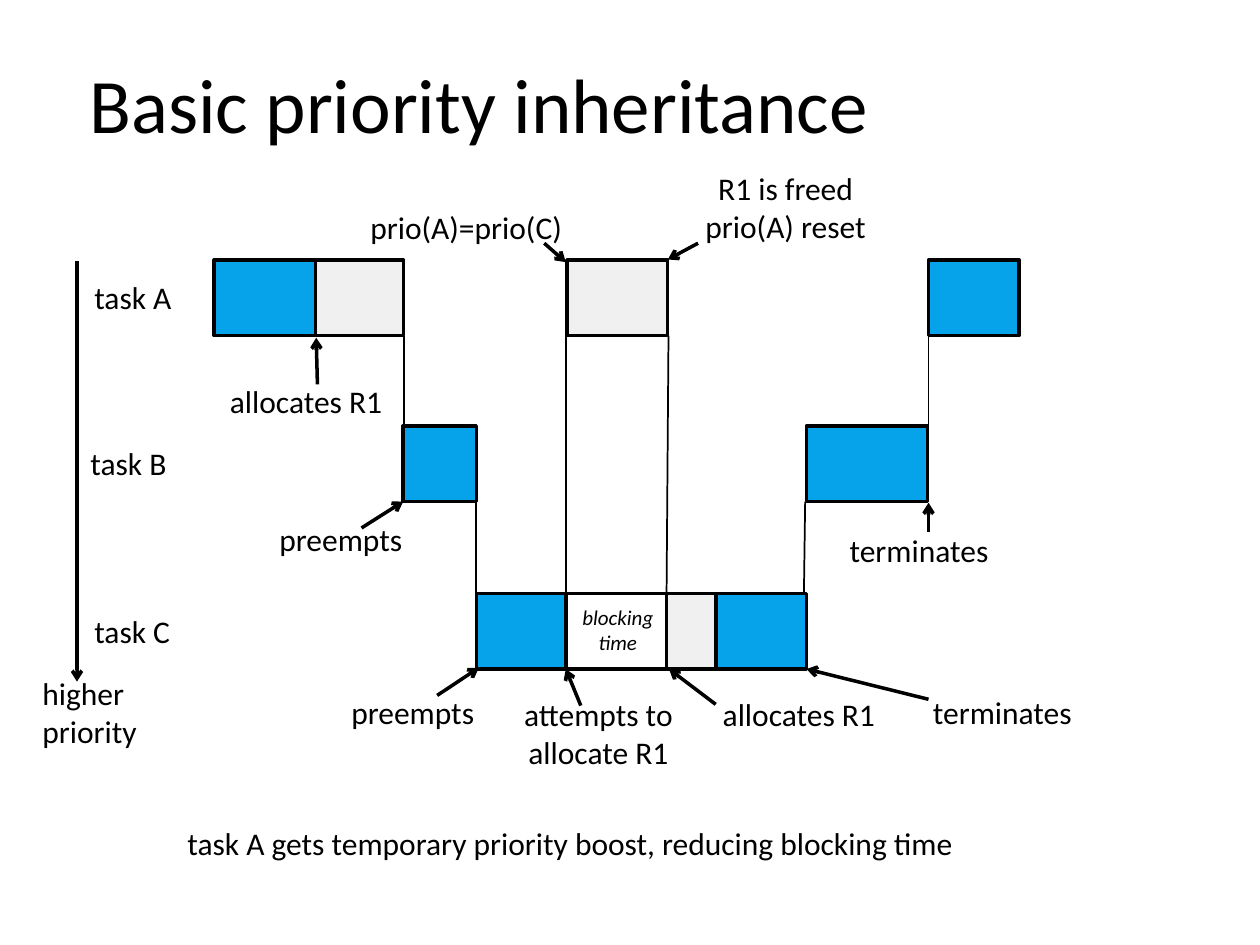
from lxml import etree
from pptx import Presentation
from pptx import util as u
from pptx.dml import color
from pptx.enum import shapes, text
from pptx.oxml import ns

HUES = {"ink": "000000", "run": "06A3EA", "lock": "D9D9D9"}
TALL = 43.2
ROWS = {"A": 148.6, "B": 243.4, "C": 339.1}


def rgb(name):
    return color.RGBColor.from_string(HUES[name])


class Chart:
    font = "Calibri"
    size = 18
    bold = 2
    thin = 1

    def __init__(self, slide):
        self.slide = slide

    def box(self, row, left, right, hue=None):
        item = self.slide.shapes.add_shape(
            shapes.MSO_SHAPE.RECTANGLE, u.Pt(left), u.Pt(ROWS[row]),
            u.Pt(right - left), u.Pt(TALL))
        item.shadow.inherit = False
        item.line.color.rgb = rgb("ink")
        item.line.width = u.Pt(self.bold)
        if hue is None:
            item.fill.background()
            return
        item.fill.solid()
        item.fill.fore_color.rgb = rgb(hue)
        if hue == "lock":
            tint = item.fill._xPr.find(ns.qn("a:solidFill"))[0]
            etree.SubElement(tint, ns.qn("a:alpha")).set("val", "39000")

    def label(self, words, left, top, width, mid=True, size=size, slant=False):
        count = words.count("\n") + 1
        item = self.slide.shapes.add_textbox(
            u.Pt(left), u.Pt(top), u.Pt(width), u.Pt(count * size * 1.2 + 7.2))
        frame = item.text_frame
        frame.word_wrap = False
        frame.auto_size = text.MSO_AUTO_SIZE.SHAPE_TO_FIT_TEXT
        frame.text = words
        for para in frame.paragraphs:
            para.alignment = text.PP_ALIGN.CENTER if mid else text.PP_ALIGN.LEFT
            for run in para.runs:
                run.font.name = self.font
                run.font.size = u.Pt(size)
                run.font.italic = slant
                run.font.color.rgb = rgb("ink")

    def line(self, start, end, width=thin):
        item = self.slide.shapes.add_connector(
            shapes.MSO_CONNECTOR.STRAIGHT, *map(u.Pt, start + end))
        item.line.color.rgb = rgb("ink")
        item.line.width = u.Pt(width)
        etree.SubElement(item._element.spPr, ns.qn("a:effectLst"))
        return item

    def arrow(self, start, end):
        item = self.line(start, end, self.bold)
        tip = etree.SubElement(item.line._get_or_add_ln(), ns.qn("a:tailEnd"))
        tip.set("type", "arrow")


def main():
    deck = Presentation()
    deck.slide_width, deck.slide_height = u.Pt(720), u.Pt(540)
    chart = Chart(deck.slides.add_slide(deck.slide_layouts[6]))

    chart.label("Basic priority inheritance", 44, 28.8, 464.5, False, 44)
    chart.label("task A gets temporary priority boost, reducing blocking time",
                100, 467.3, 457.2, False)
    chart.label("higher\npriority", 17.2, 381.6, 69, False)
    for row, left in (("A", 46.8), ("B", 44.6), ("C", 46.8)):
        chart.label(f"task {row}", left, ROWS[row] + 6.9, 59, False)

    for row, left, right, hue in (
        ("A", 324, 381.4, "lock"),
        ("A", 180.2, 230.6, "lock"),
        ("A", 122.4, 180.2, "run"),
        ("B", 230.2, 272.2, "run"),
        ("C", 272.2, 323.6, "run"),
        ("C", 323.6, 380.9, None),
        ("B", 460.8, 530.2, "run"),
        ("C", 380.9, 409.2, "lock"),
        ("C", 409.2, 460.8, "run"),
        ("A", 530.6, 582.4, "run"),
    ):
        chart.box(row, left, right, hue)
    chart.label("blocking\ntime", 325.4, 342, 55.4, size=12, slant=True)

    for low, high, foot, head in (
        (231, 231, "B", "A"),
        (272.2, 272.2, "C", "B"),
        (323.4, 323.4, "C", "A"),
        (380.9, 382, "C", "A"),
        (459.4, 460.1, "C", "B"),
        (530.6, 530.6, "B", "A"),
    ):
        chart.line((low, ROWS[foot]), (high, ROWS[head] + TALL))

    for words, left, top, width in (
        ("allocates R1", 123.8, 214.6, 102.2),
        ("preempts", 151.9, 293.8, 85.7),
        ("attempts to\nallocate R1", 291.6, 393.8, 100.8),
        ("R1 is freed\nprio(A) reset", 395.3, 92.9, 107.3),
        ("preempts", 193, 392.4, 85.7),
        ("terminates", 478, 300.2, 94.3),
        ("prio(A)=prio(C)", 203.8, 115.2, 125.3),
        ("allocates R1", 405.4, 393.8, 102.2),
        ("terminates", 525.6, 392.4, 94.3),
    ):
        chart.label(words, left, top, width)

    for start, end in (
        ((44, 149), (44, 389.5)),
        ((181.4, 219.6), (180.7, 193)),
        ((206.6, 301.7), (230.4, 286.6)),
        ((331.9, 403.2), (323.3, 382.3)),
        ((249.8, 397.4), (273.6, 381.6)),
        ((530.6, 303.8), (530.6, 287.3)),
        ((398.9, 139), (381.6, 148.3)),
        ((311, 139), (323.3, 149.8)),
        ((409, 402.5), (382.3, 382.3)),
        ((530.6, 399.6), (460.8, 382.3)),
    ):
        chart.arrow(start, end)

    deck.save("out.pptx")


if __name__ == "__main__":
    main()
